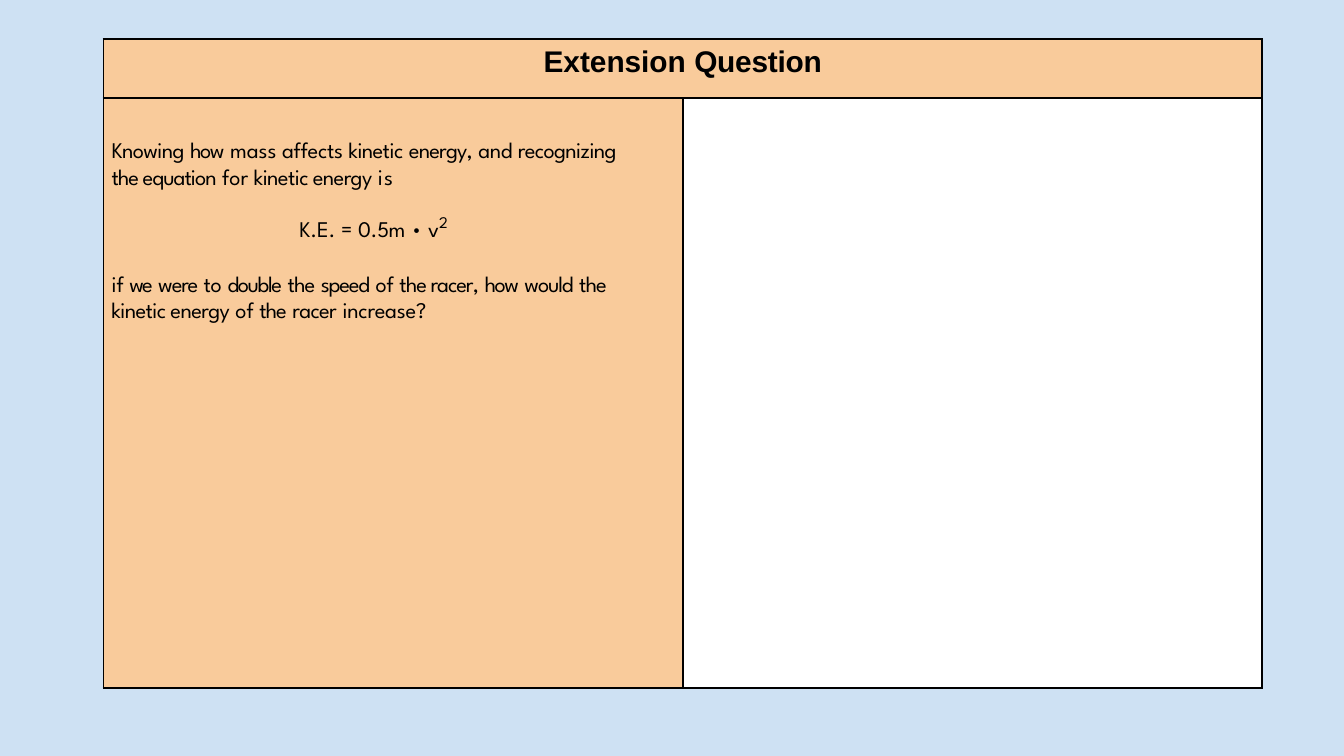
from dataclasses import dataclass

import pptx
import pptx.dml.color
import pptx.enum.text
import pptx.util
from lxml import etree
from pptx.oxml.ns import qn

Inches, Pt = pptx.util.Inches, pptx.util.Pt
rgb = pptx.dml.color.RGBColor.from_string
LEFT, CENTER = pptx.enum.text.PP_ALIGN.LEFT, pptx.enum.text.PP_ALIGN.CENTER


@dataclass(frozen=True)
class Theme:
    backdrop: str = "CEE1F3"
    panel: str = "F9CB9B"
    answer: str = "FFFFFF"
    ink: str = "000000"
    heading_font: str = "Arial"
    body_font: str = "League Spartan"
    heading_size: float = 16
    body_size: float = 12
    exponent_size: float = 15
    line_pitch: float = 14.3
    border: float = 1


THEME = Theme()

# Every run is (text, letter spacing in points).
HEADING = [("Extension ", 0), ("Question", -0.1)]
PREMISE = [
    ("Knowing ", -0.3), ("how ", -0.8), ("mass ", 0), ("affects ", -0.1),
    ("kinetic ", -0.3), ("energy, ", -0.4), ("and ", -0.2), ("recognizing ", -0.3),
    ("the equation ", -0.5), ("for ", 0), ("kinetic energy ", -0.3), ("is", 0.6),
]
EQUATION = [("K.E. ", -0.1), ("= ", -0.8), ("0.5m ", -0.2), ("• ", -3.2), ("v", -0.4)]
EXPONENT = ("2", -0.6)
QUESTION = [
    ("if ", 0), ("we ", -1.1), ("were", -0.6), (" to ", -0.1), ("double ", -0.7),
    ("the ", -0.5), ("speed ", -0.6), ("of ", 0), ("the racer, ", -0.5),
    ("how ", -0.8), ("would ", -0.6), ("the ", -0.5), ("kinetic energy ", -0.3),
    ("of ", 0), ("the ", -0.5), ("racer ", -0.3), ("increase?", -0.1),
]
# Paragraphs are (runs, alignment, blank lines before).
PROMPT = [(PREMISE, LEFT, 0), (EQUATION, CENTER, 1), (QUESTION, LEFT, 1)]

SLIDE_W = 10
SLIDE_H = SLIDE_W * 9 / 16
TABLE_LEFT, TABLE_TOP = 0.77, 0.29
COLUMN_W = 4.31
ROW_HEIGHTS = [0.44, 4.39]


def add_run(paragraph, text, tracking, font, size, bold=False):
    run = paragraph.add_run()
    run.text = text
    run.font.name = font
    run.font.size = Pt(size)
    run.font.bold = bold
    run.font.color.rgb = rgb(THEME.ink)
    if tracking:
        run.font._element.set("spc", str(round(tracking * 100)))
    return run


def add_words(paragraph, text, tracking, font, size):
    """Track the words only, leaving the space after them at its full width."""
    words = text.rstrip()
    add_run(paragraph, words, tracking, font, size)
    if words != text:
        add_run(paragraph, " ", 0, font, size)


def style_cell(cell, fill, left=0, top=0, right=0):
    """Draw the four borders, then set the fill and the insets in inches."""
    properties = cell._tc.get_or_add_tcPr()
    for side in ("a:lnL", "a:lnR", "a:lnT", "a:lnB"):
        line = etree.SubElement(properties, qn(side), w=str(Pt(THEME.border)))
        solid = etree.SubElement(line, qn("a:solidFill"))
        etree.SubElement(solid, qn("a:srgbClr"), val=THEME.ink)
    cell.fill.solid()
    cell.fill.fore_color.rgb = rgb(fill)
    cell.margin_left, cell.margin_top = Inches(left), Inches(top)
    cell.margin_right, cell.margin_bottom = Inches(right), 0


def fill_heading(cell):
    paragraph = cell.text_frame.paragraphs[0]
    paragraph.alignment = CENTER
    for text, tracking in HEADING:
        add_run(paragraph, text, tracking, THEME.heading_font, THEME.heading_size, True)


def fill_prompt(cell):
    frame = cell.text_frame
    for index, (runs, alignment, gap) in enumerate(PROMPT):
        paragraph = frame.add_paragraph() if index else frame.paragraphs[0]
        paragraph.alignment = alignment
        paragraph.line_spacing = Pt(THEME.line_pitch)
        paragraph.space_before = Pt(gap * THEME.line_pitch)
        for text, tracking in runs:
            add_words(paragraph, text, tracking, THEME.body_font, THEME.body_size)
        if runs is EQUATION:
            power = add_run(paragraph, *EXPONENT, THEME.body_font, THEME.exponent_size)
            power.font._element.set("baseline", "31000")


def main():
    deck = pptx.Presentation()
    deck.slide_width, deck.slide_height = Inches(SLIDE_W), Inches(SLIDE_H)
    slide = deck.slides.add_slide(deck.slide_layouts[6])
    slide.background.fill.solid()
    slide.background.fill.fore_color.rgb = rgb(THEME.backdrop)

    table = slide.shapes.add_table(
        len(ROW_HEIGHTS), 2, Inches(TABLE_LEFT), Inches(TABLE_TOP),
        Inches(2 * COLUMN_W), Inches(sum(ROW_HEIGHTS))).table
    table.first_row = table.horz_banding = False
    for column in table.columns:
        column.width = Inches(COLUMN_W)
    for row, height in zip(table.rows, ROW_HEIGHTS):
        row.height = Inches(height)

    heading, heading_end = table.rows[0].cells
    prompt, answer = table.rows[1].cells
    heading.merge(heading_end)
    for cell in (heading, heading_end):
        style_cell(cell, THEME.panel, top=0.05)
    style_cell(prompt, THEME.panel, left=0.06, top=0.29, right=0.35)
    style_cell(answer, THEME.answer)
    fill_heading(heading)
    fill_prompt(prompt)
    deck.save("out.pptx")


if __name__ == "__main__":
    main()
